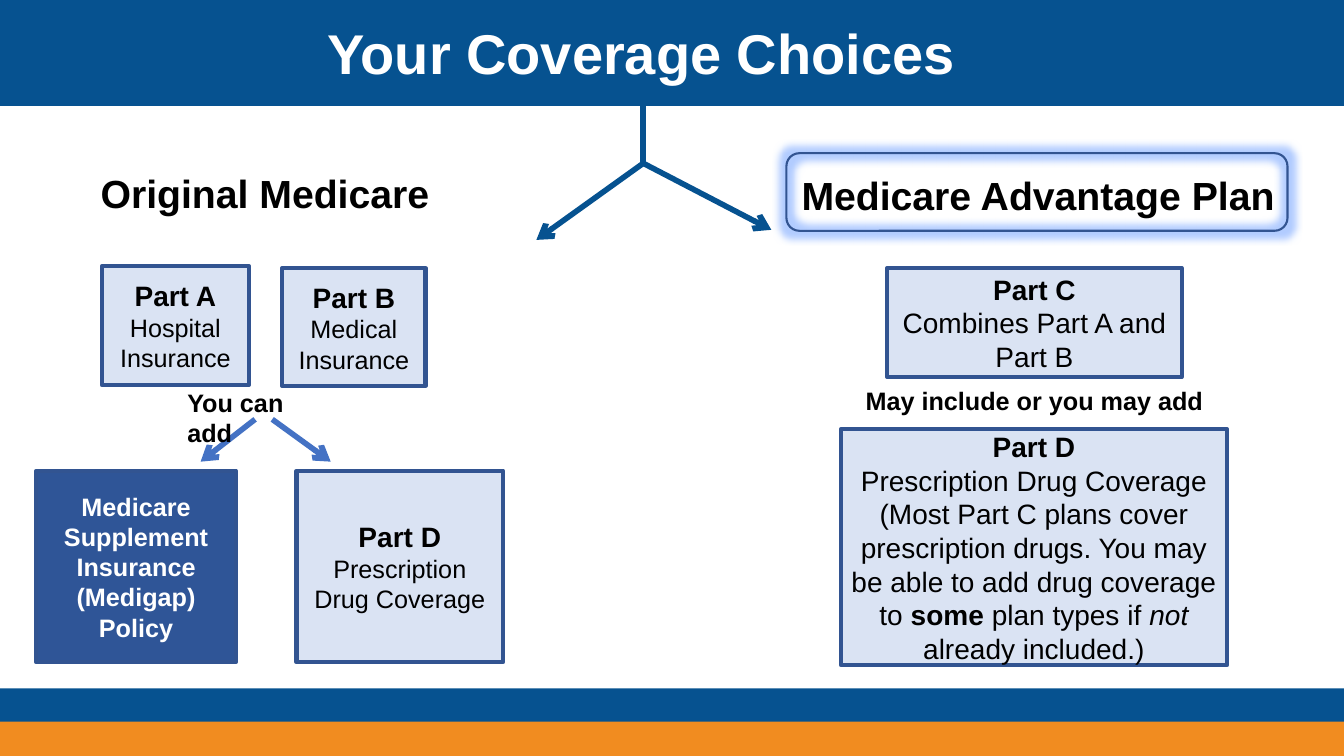
"""Build the slide that compares Medicare coverage choices."""
from dataclasses import dataclass
from typing import NamedTuple

from lxml.etree import SubElement
from pptx import Presentation
from pptx.dml.color import RGBColor
from pptx.enum.shapes import MSO_CONNECTOR, MSO_SHAPE
from pptx.enum.text import MSO_ANCHOR, PP_ALIGN
from pptx.oxml.ns import qn
from pptx.shapes.autoshape import Shape
from pptx.slide import Slide
from pptx.util import Pt

PX = 9144


@dataclass(frozen=True)
class Theme:
    font: str = "Arial"
    navy: str = "065290"
    orange: str = "F18C20"
    pale: str = "DAE3F3"
    border: str = "325491"
    supplement: str = "2F5597"
    branch: str = "4472C4"
    glow: str = "3F80FF"
    white: str = "FFFFFF"
    black: str = "000000"
    title: int = 40
    heading: int = 28
    lead: int = 20
    body: int = 18
    thick: float = 4
    medium: float = 3
    thin: float = 1.5


THEME = Theme()


class Area(NamedTuple):
    left: int
    top: int
    width: int
    height: int


class Span(NamedTuple):
    text: str
    size: int = THEME.lead
    bold: bool = False
    italic: bool = False


Lines = tuple[tuple[Span, ...], ...]


class Band(NamedTuple):
    area: Area
    fill: str


class Label(NamedTuple):
    area: Area
    span: Span
    align: PP_ALIGN = PP_ALIGN.LEFT
    color: str = THEME.black


class Card(NamedTuple):
    area: Area
    lines: Lines
    fill: str = THEME.pale
    color: str = THEME.black


class Link(NamedTuple):
    start: tuple[int, int]
    end: tuple[int, int]
    color: str = THEME.navy
    arrow: bool = True


def coverage(name: str, detail: str, size: int = THEME.body) -> Lines:
    """Return a bold coverage name followed by its description."""
    return (Span(name, bold=True),), (Span(detail, size),)


BANDS = (
    Band(Area(0, 0, 1333, 105), THEME.navy),
    Band(Area(0, 683, 1333, 34), THEME.navy),
    Band(Area(0, 716, 1333, 34), THEME.orange),
)
FORK = (638, 162)
LINKS = (
    Link((638, 104), (638, 165), arrow=False),
    Link(FORK, (532, 238)),
    Link(FORK, (765, 228)),
    Link((253, 416), (199, 458), THEME.branch),
    Link((270, 416), (328, 458), THEME.branch),
)
CARDS = (
    Card(Area(101, 264, 146, 118), coverage("Part A", "Hospital Insurance")),
    Card(Area(280, 266, 142, 117), coverage("Part B", "Medical Insurance")),
    Card(
        Area(36, 467, 198, 190),
        ((Span("Medicare Supplement Insurance (Medigap) Policy", THEME.body, True),),),
        THEME.supplement,
        THEME.white,
    ),
    Card(Area(294, 467, 205, 190), coverage("Part D", "Prescription Drug Coverage")),
    Card(Area(880, 266, 292, 108), coverage("Part C", "Combines Part A and Part B", THEME.lead)),
    Card(
        Area(834, 426, 383, 234),
        coverage("Part D", "Prescription Drug Coverage", THEME.lead) + ((
            Span("(Most Part C plans cover prescription drugs. "
                 "You may be able to add drug coverage to "),
            Span("some", bold=True),
            Span(" plan types if "),
            Span("not", italic=True),
            Span(" already included.)"),
        ),),
    ),
)
LABELS = (
    Label(Area(315, 13, 649, 77), Span("Your Coverage Choices", THEME.title, True),
          color=THEME.white),
    Label(Area(90, 163, 351, 57), Span("Original Medicare", THEME.heading, True)),
    Label(Area(778, 165, 503, 57), Span("Medicare Advantage Plan", THEME.heading, True),
          PP_ALIGN.CENTER),
    Label(Area(176, 379, 146, 40), Span("You can add", THEME.body, True)),
    Label(Area(843, 377, 366, 40), Span("May include or you may add", THEME.body, True),
          PP_ALIGN.CENTER),
)
HIGHLIGHT = Area(780, 152, 497, 77)


def emu(area: Area) -> tuple[int, ...]:
    """Convert an area from px to EMU."""
    return tuple(length * PX for length in area)


def write(holder: Shape, lines: Lines, align: PP_ALIGN, color: str) -> None:
    """Write formatted paragraphs into a shape."""
    frame = holder.text_frame
    frame.word_wrap = True
    frame.text = "\n".join("" for _ in lines)
    for paragraph, spans in zip(frame.paragraphs, lines):
        paragraph.alignment = align
        for span in spans:
            run = paragraph.add_run()
            run.text = span.text
            run.font.name = THEME.font
            run.font.size = Pt(span.size)
            run.font.bold = span.bold
            run.font.italic = span.italic
            run.font.color.rgb = RGBColor.from_string(color)


def draw_box(slide: Slide, kind: MSO_SHAPE, area: Area, fill: str | None,
             border: float = 0) -> Shape:
    """Draw a shape with an optional fill and border."""
    box = slide.shapes.add_shape(kind, *emu(area))
    box.shadow.inherit = False
    if fill:
        box.fill.solid()
        box.fill.fore_color.rgb = RGBColor.from_string(fill)
    else:
        box.fill.background()
    if border:
        box.line.color.rgb = RGBColor.from_string(THEME.border)
        box.line.width = Pt(border)
    else:
        box.line.fill.background()
    return box


def draw_card(slide: Slide, card: Card) -> None:
    """Draw a bordered card with centred text."""
    box = draw_box(slide, MSO_SHAPE.RECTANGLE, card.area, card.fill, THEME.medium)
    box.text_frame.vertical_anchor = MSO_ANCHOR.MIDDLE
    write(box, card.lines, PP_ALIGN.CENTER, card.color)


def draw_label(slide: Slide, label: Label) -> None:
    """Draw a free-standing label."""
    write(slide.shapes.add_textbox(*emu(label.area)), ((label.span,),), label.align, label.color)


def draw_link(slide: Slide, link: Link) -> None:
    """Draw a straight line, with an arrowhead if asked."""
    ends = (length * PX for length in link.start + link.end)
    line = slide.shapes.add_connector(MSO_CONNECTOR.STRAIGHT, *ends)
    line.line.color.rgb = RGBColor.from_string(link.color)
    line.line.width = Pt(THEME.thick)
    properties = line._element.spPr
    if link.arrow:
        SubElement(properties.find(qn("a:ln")), qn("a:tailEnd"), type="arrow")
    SubElement(properties, qn("a:effectLst"))


def draw_highlight(slide: Slide) -> None:
    """Draw the glowing outline around the second heading."""
    outline = draw_box(slide, MSO_SHAPE.ROUNDED_RECTANGLE, HIGHLIGHT, None, THEME.thin)
    effects = outline._element.spPr.find(qn("a:effectLst"))
    glow = SubElement(effects, qn("a:glow"), rad=str(14 * PX))
    tint = SubElement(glow, qn("a:srgbClr"), val=THEME.glow)
    SubElement(tint, qn("a:alpha"), val="40000")


def main() -> None:
    """Build and save the slide."""
    deck = Presentation()
    deck.slide_width, deck.slide_height = 1333 * PX, 750 * PX
    slide = deck.slides.add_slide(deck.slide_layouts[6])
    for band in BANDS:
        draw_box(slide, MSO_SHAPE.RECTANGLE, band.area, band.fill)
    for link in LINKS:
        draw_link(slide, link)
    for card in CARDS:
        draw_card(slide, card)
    for label in LABELS:
        draw_label(slide, label)
    draw_highlight(slide)
    deck.save("out.pptx")


if __name__ == "__main__":
    main()
